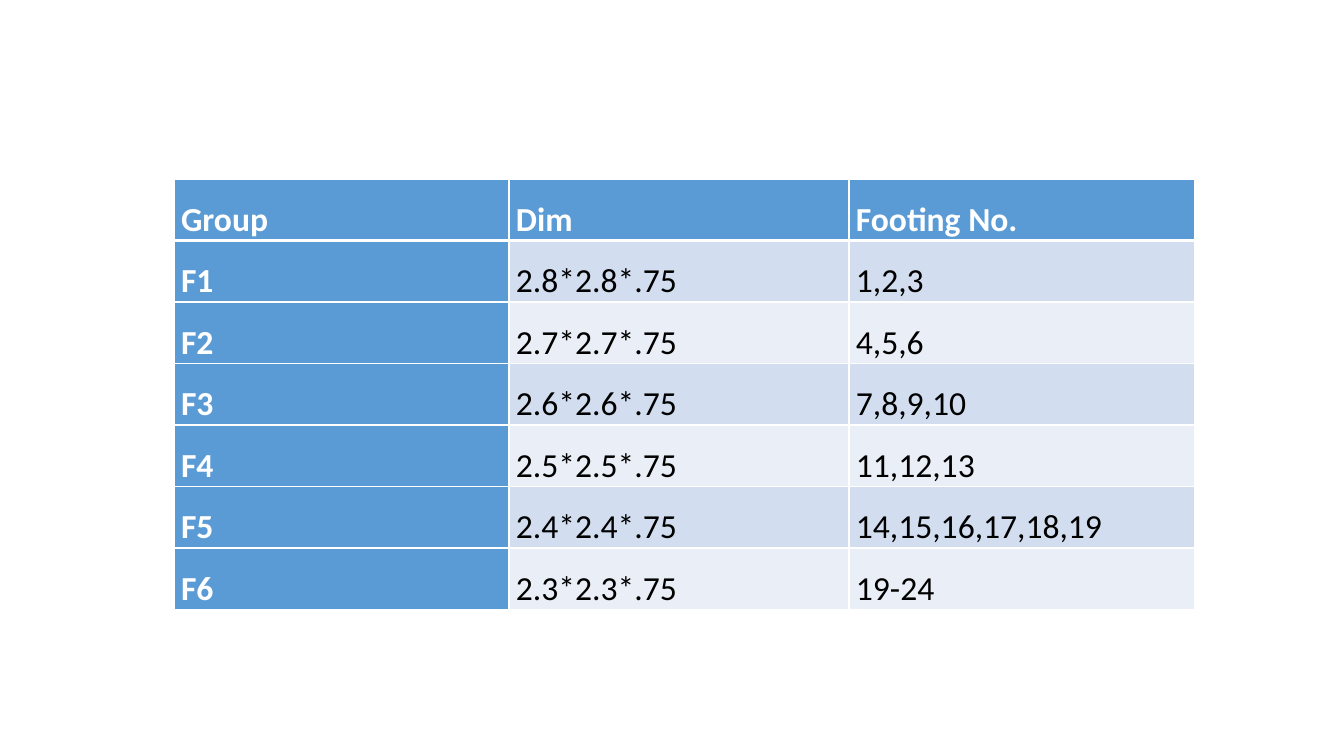
import pptx
import pptx.dml.color
import pptx.oxml
import pptx.oxml.ns
import pptx.util

SCALE = 914400 / 100.8
THEME = {
    "font": "Calibri",
    "size": 24,
    "accent": "5B9BD5",
    "bands": ("D2DEEF", "EAEFF7"),
    "light": "FFFFFF",
    "dark": "000000",
    "rule": 1,
    "header_rule": 3,
}
HEADINGS = ("Group", "Dim", "Footing No.")
FOOTINGS = (
    ("F1", "2.8*2.8*.75", "1,2,3"),
    ("F2", "2.7*2.7*.75", "4,5,6"),
    ("F3", "2.6*2.6*.75", "7,8,9,10"),
    ("F4", "2.5*2.5*.75", "11,12,13"),
    ("F5", "2.4*2.4*.75", "14,15,16,17,18,19"),
    ("F6", "2.3*2.3*.75", "19-24"),
)
COLUMN_WIDTHS = (335, 340, 346)
ROW_HEIGHT = 61


def px(length):
    return pptx.util.Emu(round(length * SCALE))


def write_text(text_frame, text, *, color, bold, line_spacing=1.5):
    paragraph = text_frame.paragraphs[0]
    paragraph.line_spacing = line_spacing
    run = paragraph.add_run()
    run.text = text
    run.font.name = THEME["font"]
    run.font.size = pptx.util.Pt(THEME["size"])
    run.font.bold = bold
    run.font.color.rgb = pptx.dml.color.RGBColor.from_string(color)


presentation = pptx.Presentation()
presentation.slide_width = px(1344)
presentation.slide_height = px(756)
slide = presentation.slides.add_slide(presentation.slide_layouts[6])

rows = (HEADINGS, *FOOTINGS)
table = slide.shapes.add_table(
    len(rows), len(HEADINGS), px(174), px(179),
    px(sum(COLUMN_WIDTHS)), px(ROW_HEIGHT * len(rows)),
).table
table.first_col = True
for column, width in zip(table.columns, COLUMN_WIDTHS):
    column.width = px(width)

for row_index, values in enumerate(rows):
    table.rows[row_index].height = px(ROW_HEIGHT)
    for column_index, value in enumerate(values):
        cell = table.cell(row_index, column_index)
        heading = row_index == 0 or column_index == 0
        cell.margin_left = cell.margin_right = px(7)
        cell.margin_top = cell.margin_bottom = 0
        write_text(
            cell.text_frame, value, bold=heading,
            color=THEME["light"] if heading else THEME["dark"],
        )
        fill_color = THEME["accent"] if heading else THEME["bands"][(row_index - 1) % 2]
        cell.fill.solid()
        cell.fill.fore_color.rgb = pptx.dml.color.RGBColor.from_string(fill_color)

        properties = cell._tc.get_or_add_tcPr()
        for position, side in enumerate(("lnL", "lnR", "lnT", "lnB")):
            under_header = (row_index, side) in ((0, "lnB"), (1, "lnT"))
            weight = THEME["header_rule"] if under_header else THEME["rule"]
            border = pptx.oxml.parse_xml(
                f'<a:{side} {pptx.oxml.ns.nsdecls("a")} w="{pptx.util.Pt(weight)}">'
                f'<a:solidFill><a:srgbClr val="{THEME["light"]}"/></a:solidFill></a:{side}>'
            )
            properties.insert(position, border)

presentation.save("out.pptx")
